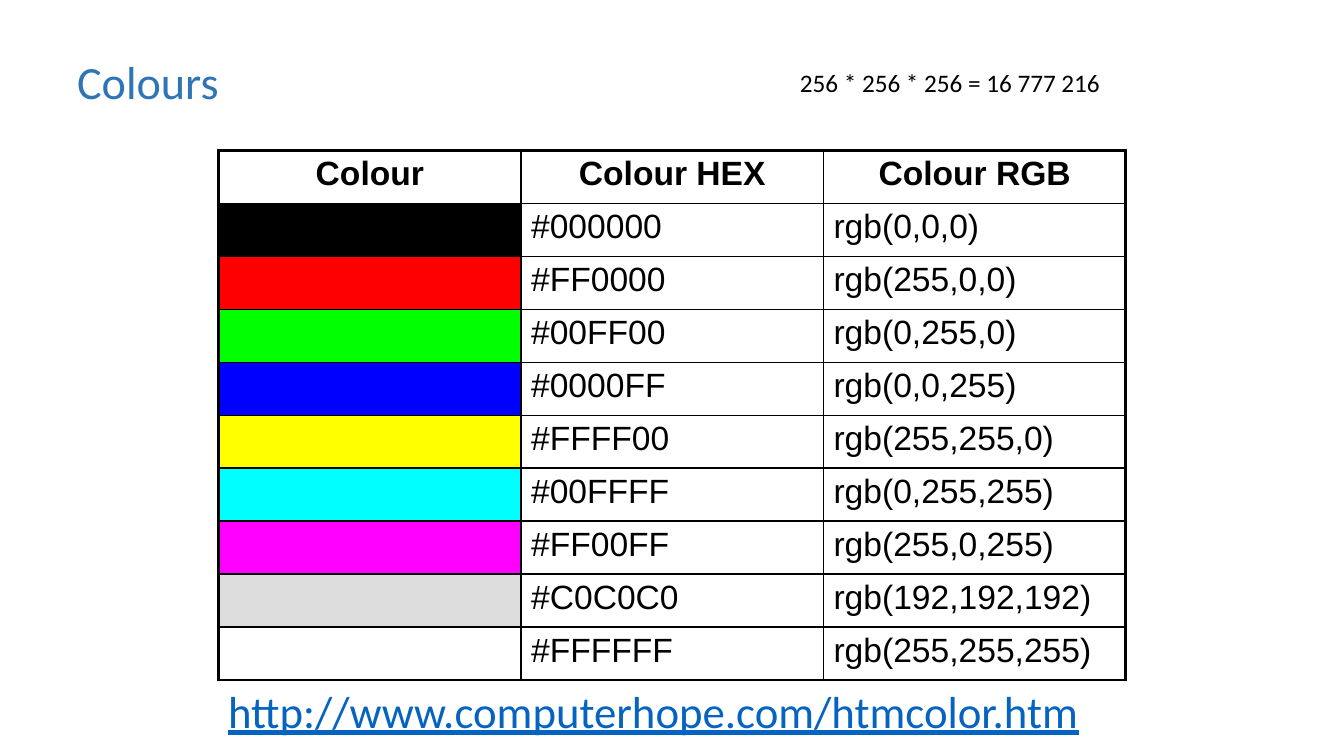
from lxml.etree import SubElement
from pptx import Presentation
from pptx.dml.color import RGBColor
from pptx.enum.text import MSO_ANCHOR, PP_ALIGN
from pptx.oxml.ns import qn
from pptx.util import Pt

BLACK = RGBColor(0x00, 0x00, 0x00)
WHITE = RGBColor(0xFF, 0xFF, 0xFF)
TITLE_BLUE = RGBColor(0x2E, 0x75, 0xB6)
LINK_BLUE = RGBColor(0x05, 0x63, 0xC1)
SILVER_SWATCH = RGBColor(0xDD, 0xDD, 0xDD)

HEADINGS = ["Colour", "Colour HEX", "Colour RGB"]
HEX_CODES = ["000000", "FF0000", "00FF00", "0000FF", "FFFF00",
             "00FFFF", "FF00FF", "C0C0C0", "FFFFFF"]
SWATCHES = {"C0C0C0": SILVER_SWATCH}
COLUMN_WIDTH = 216
ROW_HEIGHT = 37.87
OUTER_LINE = 2.25
INNER_LINE = 1


def add_span(para, text, font, size, color, bold=False, underline=False):
    span = para.add_run()
    span.text = text
    span.font.name = font
    span.font.size = Pt(size)
    span.font.color.rgb = color
    span.font.bold = bold
    span.font.underline = underline


def add_text(page, text, left, top, width, height, size, color,
             anchor=MSO_ANCHOR.TOP, underline=False):
    box = page.shapes.add_textbox(Pt(left), Pt(top), Pt(width), Pt(height))
    frame = box.text_frame
    frame.word_wrap = True
    frame.vertical_anchor = anchor
    add_span(frame.paragraphs[0], text, "Calibri", size, color, underline=underline)
    return box


def set_borders(cell, widths):
    properties = cell._tc.get_or_add_tcPr()
    for position, (side, width) in enumerate(widths.items()):
        line = SubElement(properties, qn(f"a:ln{side}"), w=str(Pt(width)))
        fill = SubElement(line, qn("a:solidFill"))
        SubElement(fill, qn("a:srgbClr"), val=str(BLACK))
        properties.insert(position, line)


def fill_cell(cell, text, color, heading):
    cell.fill.solid()
    cell.fill.fore_color.rgb = color
    if text:
        para = cell.text_frame.paragraphs[0]
        para.alignment = PP_ALIGN.CENTER if heading else PP_ALIGN.LEFT
        add_span(para, text, "Arial", 24, BLACK, bold=heading)


def add_colour_table(page, left, top):
    rows = [[(heading, WHITE) for heading in HEADINGS]]
    for code in HEX_CODES:
        color = RGBColor.from_string(code)
        rgb = ",".join(str(channel) for channel in color)
        rows.append([("", SWATCHES.get(code, color)),
                     (f"#{code}", WHITE), (f"rgb({rgb})", WHITE)])

    last_row, last_column = len(rows) - 1, len(HEADINGS) - 1
    table = page.shapes.add_table(
        len(rows), len(HEADINGS), Pt(left), Pt(top),
        Pt(COLUMN_WIDTH * len(HEADINGS)), Pt(ROW_HEIGHT * len(rows))).table
    for column in table.columns:
        column.width = Pt(COLUMN_WIDTH)
    for r, row in enumerate(rows):
        table.rows[r].height = Pt(ROW_HEIGHT)
        for c, (text, color) in enumerate(row):
            cell = table.cell(r, c)
            fill_cell(cell, text, color, heading=r == 0)
            outer = {"L": c == 0, "R": c == last_column,
                     "T": r == 0, "B": r == last_row}
            set_borders(cell, {side: OUTER_LINE if edge else INNER_LINE
                               for side, edge in outer.items()})


def main():
    deck = Presentation()
    deck.slide_width, deck.slide_height = Pt(960), Pt(540)
    page = deck.slides.add_slide(deck.slide_layouts[6])
    title = add_text(page, "Colours", 48, 9.5, 792, 102, 33, TITLE_BLUE,
                     anchor=MSO_ANCHOR.MIDDLE)
    title.text_frame.paragraphs[0].line_spacing = 0.9
    add_colour_table(page, 156.2, 107.3)
    add_text(page, "http://www.computerhope.com/htmcolor.htm",
             155.8, 484.5, 649, 45.5, 32, LINK_BLUE, underline=True)
    add_text(page, "256 * 256 * 256 = 16 777 216",
             564.3, 44.6, 232, 29, 18, BLACK)
    deck.save("out.pptx")


if __name__ == "__main__":
    main()
